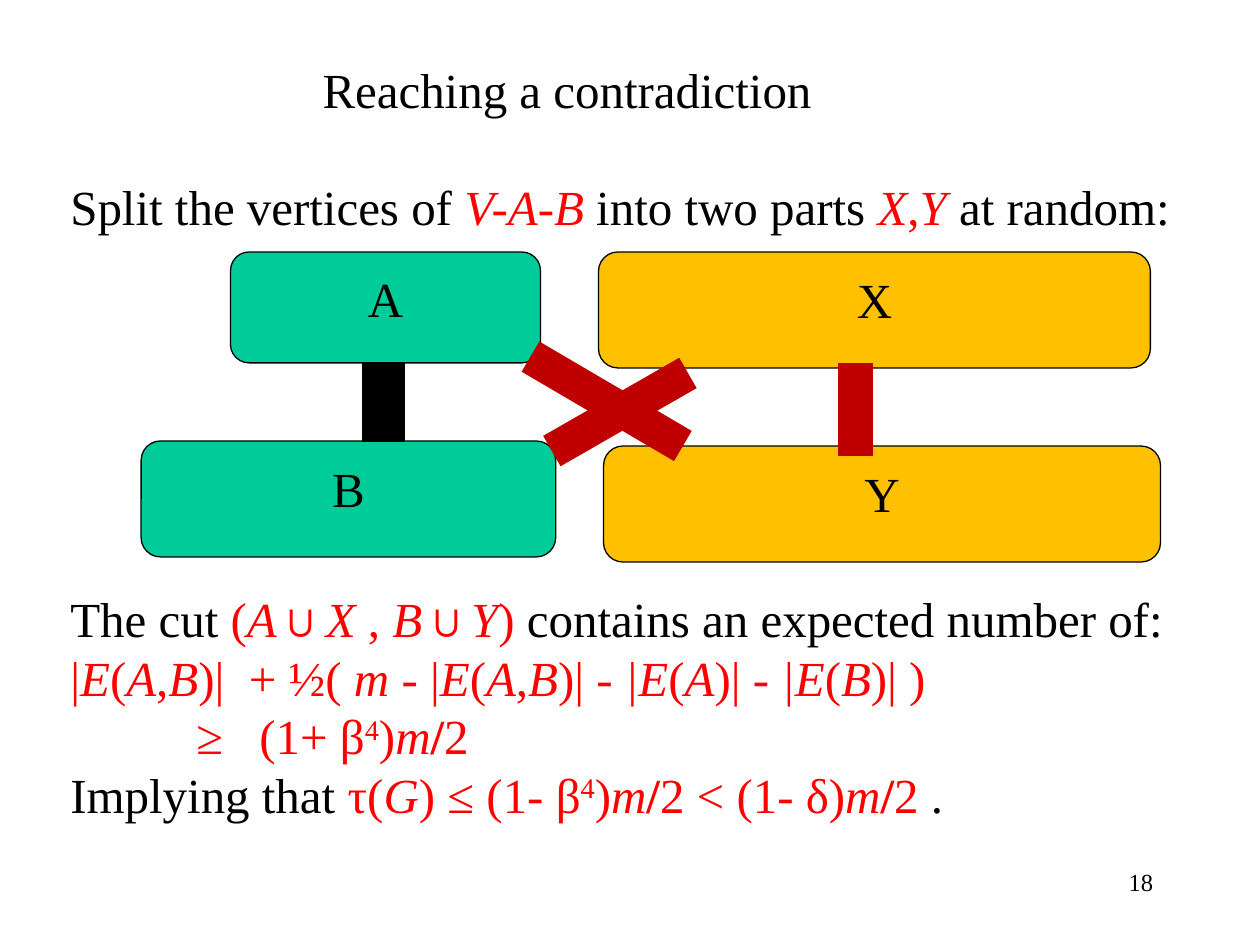
from lxml.etree import SubElement
from pptx import Presentation
from pptx.dml.color import RGBColor
from pptx.enum.shapes import MSO_CONNECTOR as LINE, MSO_SHAPE as SHAPE
from pptx.enum.text import MSO_ANCHOR as ANCHOR, PP_ALIGN as ALIGN
from pptx.oxml.ns import qn
from pptx.util import Inches, Pt

BLACK, RED, DARK, GREEN, GOLD = "000000", "FF0000", "C00000", "00CC99", "FFC000"
LEFT, TOP, WIDTH, PITCH = 0.46, 0.42, 9.21, 33.6  # text column, line pitch in points


def color(text):
    return RGBColor.from_string(text)


def row(index):
    """Top of a text box that starts on the given line of the column."""
    return TOP + index * PITCH / 72


class Deck:
    face, size = "Times New Roman", 28

    def __init__(self, wide, high):
        self.show = Presentation()
        self.show.slide_width, self.show.slide_height = Inches(wide), Inches(high)
        self.slide = self.show.slides.add_slide(self.show.slide_layouts[5])

    def run(self, para, text, style="k", size=None):
        """Style letters: k black (else red), i italic, b bold, s superscript."""
        run = para.add_run()
        run.text = text
        font = run.font
        font.name, font.size = self.face, Pt(size or self.size)
        font.italic, font.bold = "i" in style, "b" in style
        font.color.rgb = color(BLACK if "k" in style else RED)
        if "s" in style:
            font._element.set("baseline", "30000")

    def fill(self, frame, lines):
        frame.word_wrap = True
        frame.vertical_anchor = ANCHOR.TOP
        frame.margin_left = frame.margin_right = Inches(0.1)
        frame.margin_top = frame.margin_bottom = Inches(0.05)
        for i, line in enumerate(lines):
            para = frame.add_paragraph() if i else frame.paragraphs[0]
            para.alignment, para.line_spacing = ALIGN.LEFT, Pt(PITCH)
            for text, style in line:
                self.run(para, text, style)

    def title(self, text, left, top, wide, high):
        box = self.slide.shapes.title
        box.left, box.top, box.width, box.height = map(Inches, (left, top, wide, high))
        self.fill(box.text_frame, [[(text, "k")]])

    def text(self, lines, left, top, wide, high):
        box = self.slide.shapes.add_textbox(*map(Inches, (left, top, wide, high)))
        self.fill(box.text_frame, lines)

    def number(self, text, left, top, wide, high):
        box = self.slide.shapes.add_textbox(*map(Inches, (left, top, wide, high)))
        para = box.text_frame.paragraphs[0]
        box.text_frame.word_wrap = True
        para.alignment = ALIGN.RIGHT
        self.run(para, text, size=14)

    def block(self, kind, hue, left, top, wide, high, label=""):
        box = self.slide.shapes.add_shape(kind, *map(Inches, (left, top, wide, high)))
        box.shadow.inherit = False
        box.fill.solid()
        box.fill.fore_color.rgb = color(hue)
        box.line.color.rgb, box.line.width = color(BLACK), Pt(0.75)
        if label:
            frame = box.text_frame
            frame.vertical_anchor, frame.margin_top = ANCHOR.TOP, Inches(0.09)
            frame.paragraphs[0].alignment = ALIGN.CENTER
            self.run(frame.paragraphs[0], label)

    def bar(self, x1, y1, x2, y2):
        ends = map(Inches, (x1, y1, x2, y2))
        bar = self.slide.shapes.add_connector(LINE.STRAIGHT, *ends)
        bar.line.color.rgb, bar.line.width = color(DARK), Pt(20)
        SubElement(bar._element.spPr, qn("a:effectLst"))


def main():
    deck = Deck(10, 7.5)

    # Title and opening sentence
    deck.title("Reaching a contradiction", LEFT + 2, TOP, 6, 0.6)
    split = [("Split the vertices of ", "k"), ("V-A-B ", "i"),
             ("into two parts ", "k"), ("X", "i"), (",", "r"), ("Y", "i"),
             (" at random:", "k")]
    deck.text([split], LEFT, row(2), WIDTH, 0.6)

    # The cut and its expected size
    edges = [("E", "i"), ("(", "r"), ("A", "i"), (",", "r"), ("B", "i")]
    half = [("m", "i"), ("/", "b")]
    beta = [("4", "s"), (")", "r")] + half
    cut = [("The cut ", "k"), ("(", "r"), ("A", "i"), ("∪", "r"), ("X", "i"),
           (" , ", "r"), ("B", "i"), ("∪", "r"), ("Y", "i"), (") ", "r"),
           ("contains an expected number of:", "k")]
    count = [("|", "r"), *edges, (")|  + ½( ", "r"), ("m", "i"), (" - |", "r"),
             *edges, (")| - ", "r"), ("|E", "i"), ("(", "r"), ("A", "i"),
             (")| - ", "r"), ("|E", "i"), ("(", "r"), ("B", "i"), (")| )", "r")]
    bound = [("\t\t≥ \t(1+ β", "r"), *beta, ("2", "r")]
    end = [("Implying that ", "k"), ("τ(", "r"), ("G", "i"), (") ≤ (1- β", "r"),
           *beta, ("2 < (1- δ)", "r"), *half, ("2", "r"), (" .", "k")]
    deck.text([cut, count, bound, end], LEFT, row(9), WIDTH, 2)

    # Vertex sets
    for label, hue, *place in (("A", GREEN, 1.83, 2, 2.46, 0.88),
                               ("B", GREEN, 1.12, 3.5, 3.29, 0.92),
                               ("X", GOLD, 4.75, 2, 4.38, 0.92),
                               ("Y", GOLD, 4.79, 3.54, 4.42, 0.92)):
        deck.block(SHAPE.ROUNDED_RECTANGLE, hue, *place, label)

    # Edges between the sets
    deck.block(SHAPE.RECTANGLE, BLACK, 2.88, 2.88, 0.33, 0.62)
    for ends in ((4.21, 2.83, 5.42, 3.54), (4.38, 3.58, 5.46, 2.96),
                 (6.79, 3.62, 6.79, 2.88)):
        deck.bar(*ends)

    # Slide number
    deck.number("18", 7.17, 6.83, 2.08, 0.5)
    deck.show.save("out.pptx")


if __name__ == "__main__":
    main()
